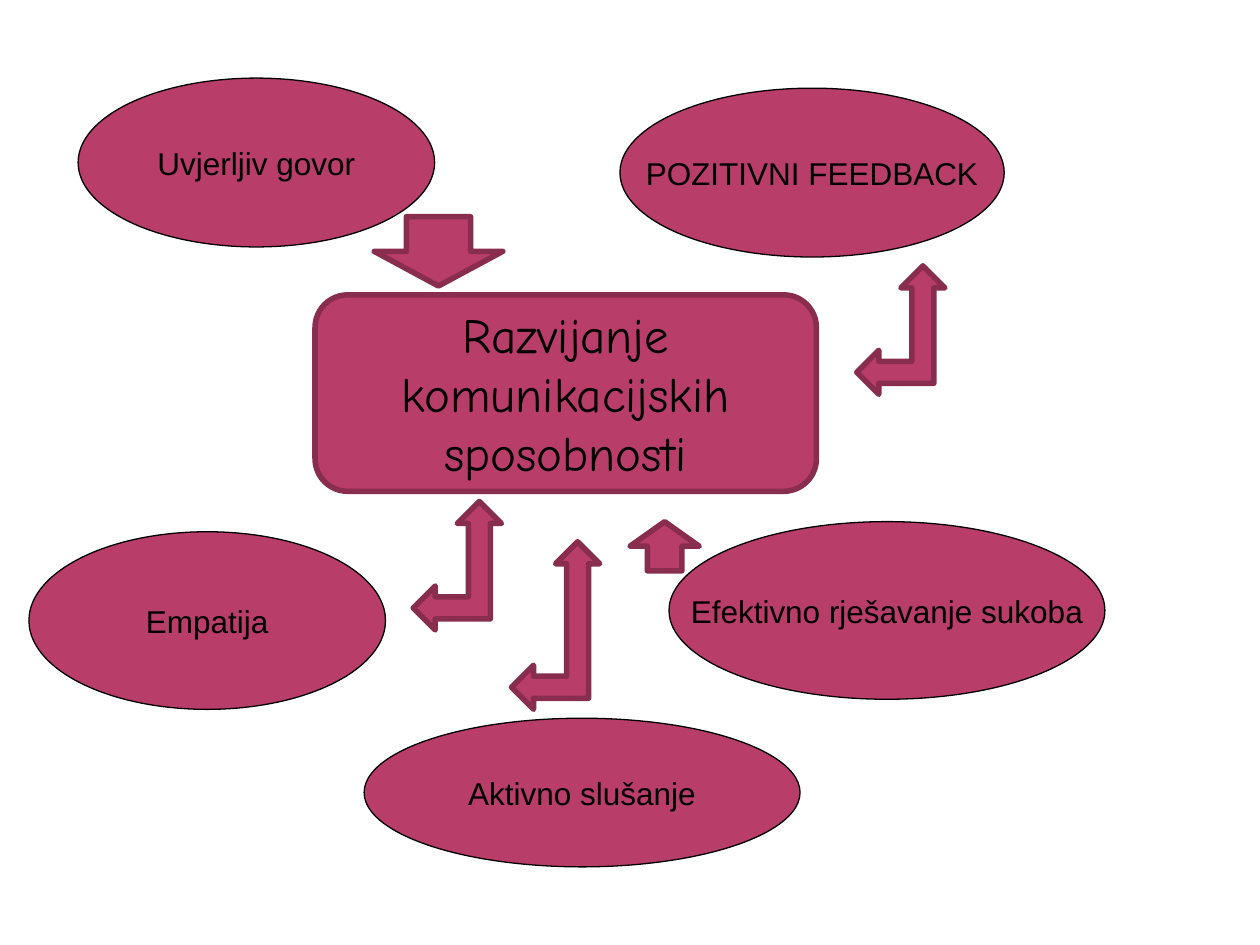
from pptx import Presentation
from pptx.dml.color import RGBColor
from pptx.enum.shapes import MSO_SHAPE as Kind
from pptx.enum.text import MSO_ANCHOR as Anchor, PP_ALIGN as Align
from pptx.util import Inches, Pt

ROSE, WINE, BLACK = "B83D68", "882D4D", "000000"
PAGE = (0, 0, 10, 7.5)
SKILLS = [
    ("Uvjerljiv govor", 0.62, 0.62, 2.83, 1.34),
    ("Efektivno rješavanje sukoba", 5.31, 4.14, 3.46, 1.41),
    ("Aktivno slušanje", 2.89, 5.7, 3.46, 1.18),
    ("Empatija", 0.23, 4.22, 2.83, 1.41),
    ("POZITIVNI FEEDBACK", 4.92, 0.7, 3.05, 1.34),
]
ARROWS = [
    (Kind.LEFT_UP_ARROW, 6.8, 2.11, 0.7, 1.02),
    (Kind.LEFT_UP_ARROW, 3.28, 3.98, 0.7, 1.02),
    (Kind.LEFT_UP_ARROW, 4.06, 4.3, 0.7, 1.33),
    (Kind.DOWN_ARROW, 2.97, 1.72, 1.02, 0.55),
    (Kind.UP_ARROW, 5, 4.14, 0.55, 0.39),
]


def color(code):
    return RGBColor.from_string(code)


def apply(target, style):
    for name, value in style.items():
        setattr(target, name, value)


def add_form(slide, kind, box, edge, width):
    form = slide.shapes.add_shape(kind, *map(Inches, box))
    form.shadow.inherit = False
    form.fill.solid()
    form.fill.fore_color.rgb = color(ROSE)
    form.line.color.rgb = color(edge)
    form.line.width = Pt(width)
    return form


def add_label(form, text, face, size, wrap):
    frame = form.text_frame
    apply(frame, {"text": text, "word_wrap": wrap, "vertical_anchor": Anchor.MIDDLE})
    para = frame.paragraphs[0]
    para.alignment = Align.CENTER
    font = para.runs[0].font
    apply(font, {"name": face, "size": Pt(size)})
    font.color.rgb = color(BLACK)


def shift(box, left, top, width, height):
    return box[0] + left, box[1] + top, width, height


def add_skills(slide, box):
    for text, *place in SKILLS:
        oval = add_form(slide, Kind.OVAL, shift(box, *place), BLACK, 0.75)
        add_label(oval, text, "Arial", 18, False)


def add_topic(slide, box):
    card = add_form(slide, Kind.ROUNDED_RECTANGLE, box, WINE, 3.15)
    add_label(card, "Razvijanje komunikacijskih sposobnosti", "Comic Neue", 28, True)


def add_arrows(slide, box):
    for kind, *place in ARROWS:
        add_form(slide, kind, shift(box, *place), WINE, 3.15)


def main():
    deck = Presentation()
    apply(deck, {"slide_width": Inches(PAGE[2]), "slide_height": Inches(PAGE[3])})
    slide = deck.slides.add_slide(deck.slide_layouts[6])
    add_skills(slide, PAGE)
    add_topic(slide, (2.5, 2.34, 3.98, 1.56))
    add_arrows(slide, PAGE)
    deck.save("out.pptx")


if __name__ == "__main__":
    main()
